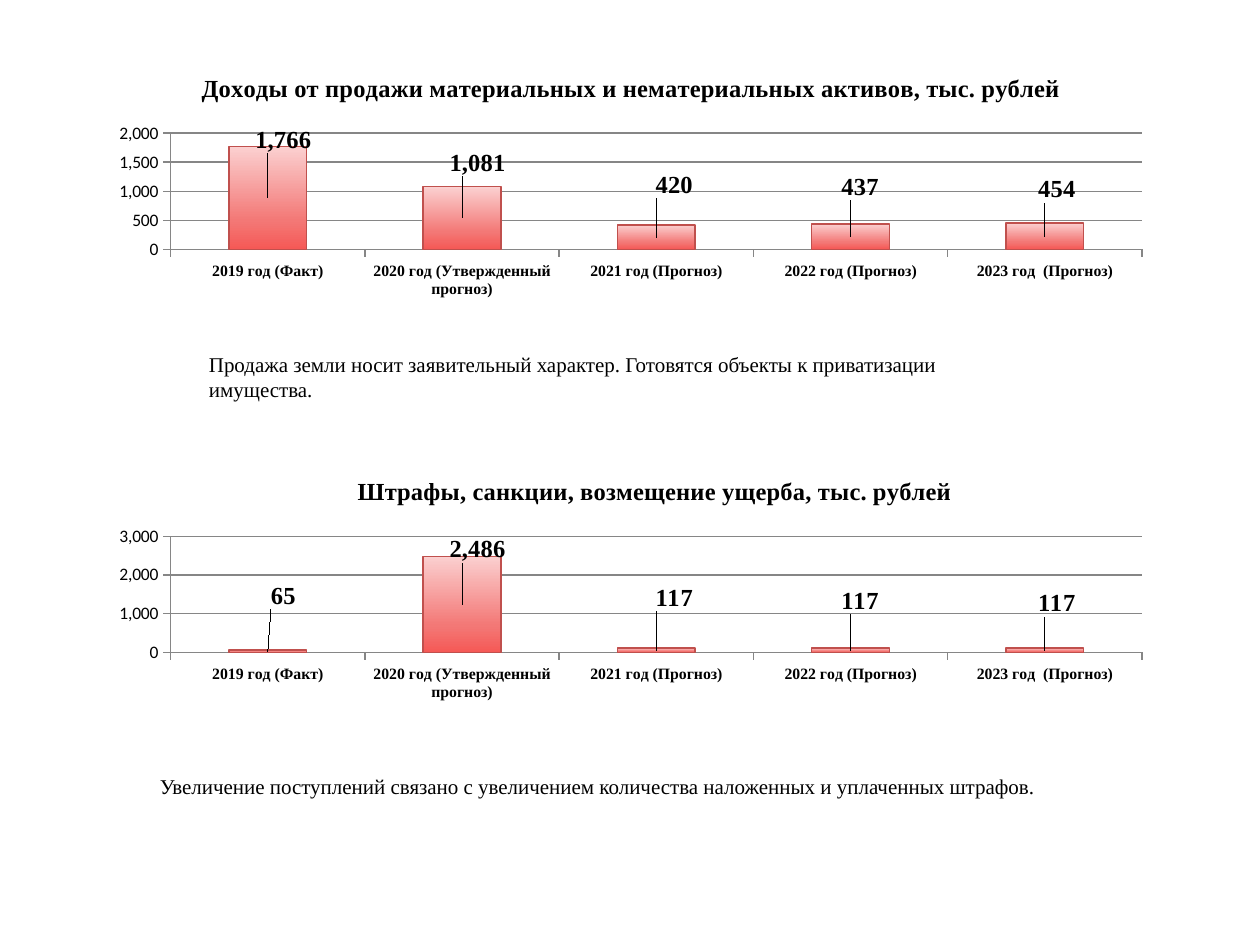
from copy import deepcopy
from dataclasses import dataclass

from pptx import Presentation
from pptx.chart.data import CategoryChartData
from pptx.dml.color import RGBColor
from pptx.enum.chart import XL_CHART_TYPE, XL_TICK_MARK
from pptx.enum.text import MSO_AUTO_SIZE
from pptx.oxml import parse_xml
from pptx.oxml.ns import nsdecls, qn
from pptx.util import Inches, Pt

STACKED = XL_CHART_TYPE.COLUMN_STACKED
TICK_OUT = XL_TICK_MARK.OUTSIDE
FIT_SHAPE = MSO_AUTO_SIZE.SHAPE_TO_FIT_TEXT


@dataclass(frozen=True)
class Theme:
    serif: str = "Times New Roman"
    sans: str = "Calibri"
    text: RGBColor = RGBColor(0x00, 0x00, 0x00)
    grid: RGBColor = RGBColor(0x86, 0x86, 0x86)
    bar_line: RGBColor = RGBColor(0xC0, 0x50, 0x4D)
    bar_stops: tuple = ((0, "FBD0D0"), (72, "F37876"), (100, "F55956"))
    title: int = 14
    note: int = 12
    value_axis: int = 10
    category_axis: int = 9
    line: float = 0.79
    number: str = "#,##0"


def layout_xml(target="", **values):
    """A manual chart layout; keys are the names of its elements."""
    items = "".join(f'<c:{key} val="{val}"/>' for key, val in values.items())
    return parse_xml(f'<c:layout {nsdecls("c")}><c:manualLayout>{target}{items}'
                     "</c:manualLayout></c:layout>")


class SlideBuilder:
    def __init__(self, prs, theme):
        self.theme = theme
        self.slide = prs.slides.add_slide(prs.slide_layouts[6])

    def font(self, font, size, name, bold=False):
        font.size, font.name, font.bold = Pt(size), name, bold
        font.color.rgb = self.theme.text

    def note(self, text, left, top, width):
        box = self.slide.shapes.add_textbox(
            Inches(left), Inches(top), Inches(width), Inches(0.3))
        tf = box.text_frame
        tf.word_wrap = False
        tf.auto_size = FIT_SHAPE
        p = tf.paragraphs[0]
        p.text = text
        self.font(p.font, self.theme.note, self.theme.serif)

    def chart(self, title, title_x, top, categories, values, shifts):
        t = self.theme
        data = CategoryChartData(number_format=t.number)
        data.categories = categories
        data.add_series("Series 1", values)
        chart = self.slide.shapes.add_chart(
            STACKED, Inches(0.23), Inches(top), Inches(9.53), Inches(2.19), data).chart
        self.font(chart.font, 18, t.sans)
        chart.has_legend = False

        # Title
        p = chart.chart_title.text_frame.paragraphs[0]
        p.text = title
        self.font(p.font, t.title, t.serif, True)
        title_el = chart.chart_title._element
        for old in title_el.findall(qn("c:layout")):
            title_el.remove(old)
        title_el.find(qn("c:tx")).addnext(
            layout_xml(xMode="edge", yMode="edge", x=title_x, y=0.03))

        # Plot area
        area = chart._chartSpace.chart.plotArea
        for old in area.findall(qn("c:layout")):
            area.remove(old)
        area.insert(0, layout_xml('<c:layoutTarget val="inner"/>', xMode="edge",
                                  yMode="edge", x=0.118, y=0.268, w=0.809, h=0.421))

        # Axes
        grid = chart.value_axis.major_gridlines.format.line
        for axis in (chart.category_axis, chart.value_axis):
            axis.major_tick_mark = TICK_OUT
        for line in (grid, chart.category_axis.format.line, chart.value_axis.format.line):
            line.color.rgb = t.grid
            line.width = Pt(t.line)
        self.font(chart.category_axis.tick_labels.font, t.category_axis, t.serif, True)
        labels = chart.value_axis.tick_labels
        self.font(labels.font, t.value_axis, t.sans)
        labels.number_format, labels.number_format_is_linked = t.number, False

        # Bars
        plot = chart.plots[0]
        plot.gap_width, plot.overlap, plot.vary_by_categories = 150, 100, False
        series = plot.series[0]
        series.invert_if_negative = False
        series.format.line.color.rgb = t.bar_line
        series.format.line.width = Pt(t.line)
        stops = "".join(f'<a:gs pos="{pos * 1000}"><a:srgbClr val="{color}"/></a:gs>'
                        for pos, color in t.bar_stops)
        series._element.get_or_add_spPr().insert(0, parse_xml(
            f'<a:gradFill {nsdecls("a")} rotWithShape="1"><a:gsLst>{stops}</a:gsLst>'
            '<a:lin ang="5400000" scaled="0"/></a:gradFill>'))
        self.value_labels(series, shifts)

    def value_labels(self, series, shifts):
        labels = series.data_labels
        labels.show_value = True
        labels.number_format, labels.number_format_is_linked = self.theme.number, False
        self.font(labels.font, self.theme.title, self.theme.serif, True)
        shared = [el for el in labels._element if el.tag != qn("c:showLeaderLines")]
        for i, (x, y) in enumerate(shifts):
            label = parse_xml(f'<c:dLbl {nsdecls("c")}><c:idx val="{i}"/></c:dLbl>')
            label.append(layout_xml(x=x, y=y))
            label.extend([deepcopy(el) for el in shared])
            labels._element.insert(i, label)


def main():
    prs = Presentation()
    prs.slide_width, prs.slide_height = Inches(10), Inches(7.5)
    s = SlideBuilder(prs, Theme())
    years = ["2019 год (Факт)", "2020 год (Утвержденный прогноз)",
             "2021 год (Прогноз)", "2022 год (Прогноз)", "2023 год  (Прогноз)"]
    # Label offsets from the bar centres, as shares of the chart size
    shifts = [(0.013, -0.2), (0.013, -0.2), (0.015, -0.19), (0.008, -0.18), (0.01, -0.17)]

    # Asset sales
    s.chart("Доходы от продажи материальных и нематериальных активов, тыс. рублей",
            0.14, 0.47, years, [1766, 1081, 420, 437, 454],
            [(0.013, -0.21)] + shifts[1:])
    s.note("Продажа земли носит заявительный характер. "
           "Готовятся объекты к приватизации имущества.", 1.56, 2.74, 6.83)

    # Fines
    s.chart("Штрафы, санкции, возмещение ущерба, тыс. рублей",
            0.27, 3.67, years, [65, 2486, 117, 117, 117], shifts)
    s.note("Увеличение поступлений связано с увеличением количества "
           "наложенных и уплаченных штрафов.", 1.17, 6.09, 7.18)

    prs.save("out.pptx")


if __name__ == "__main__":
    main()
